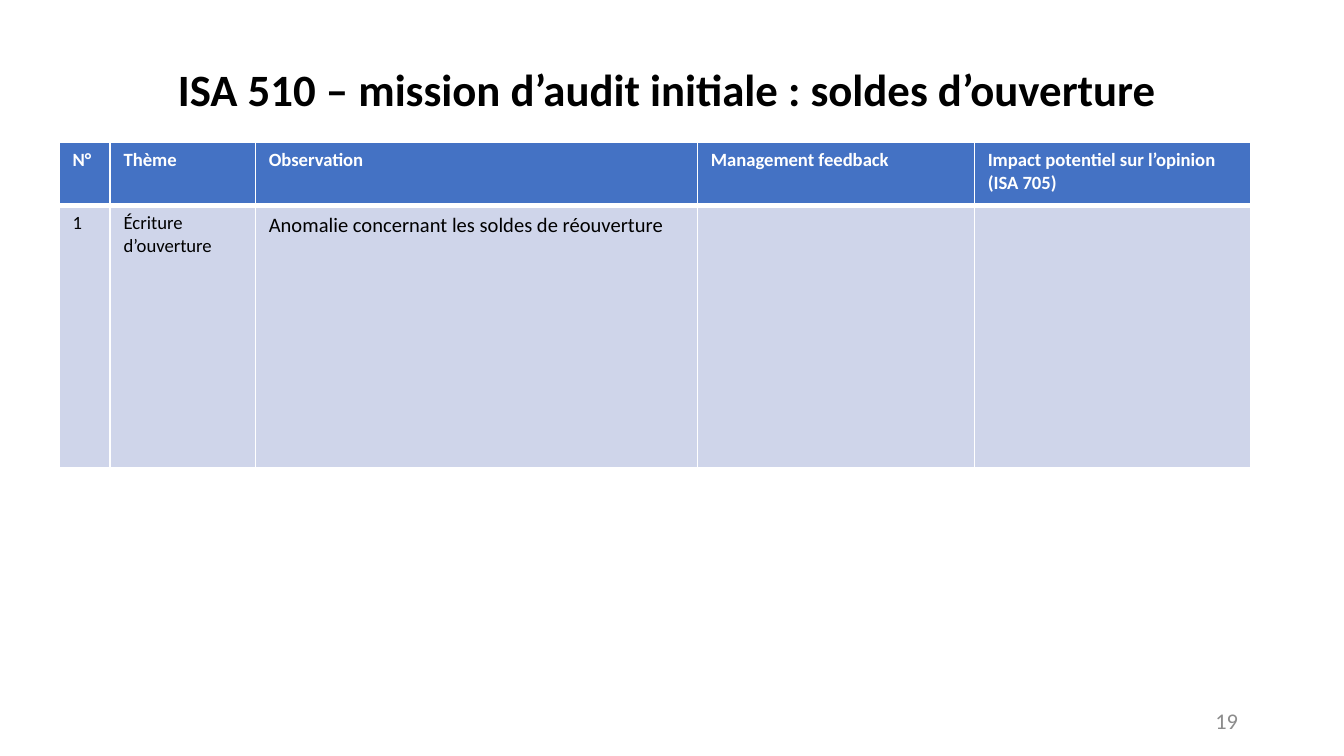
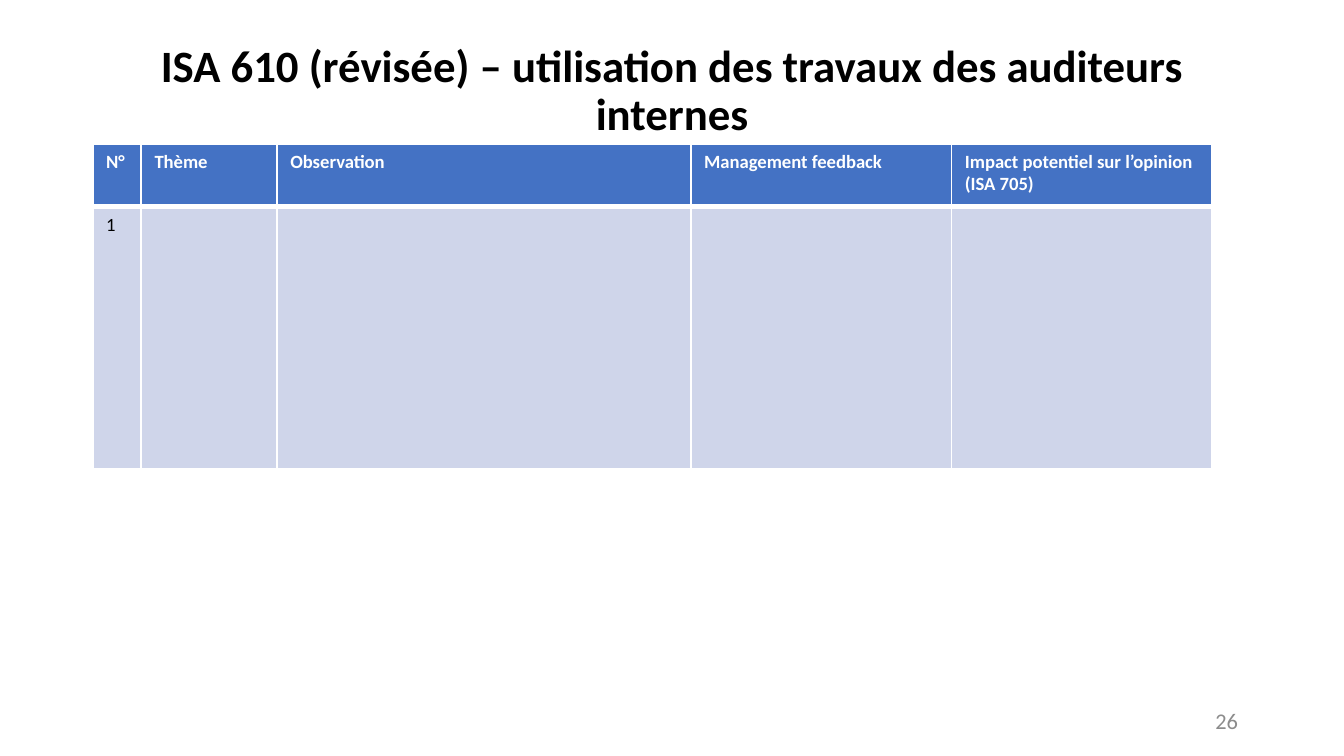
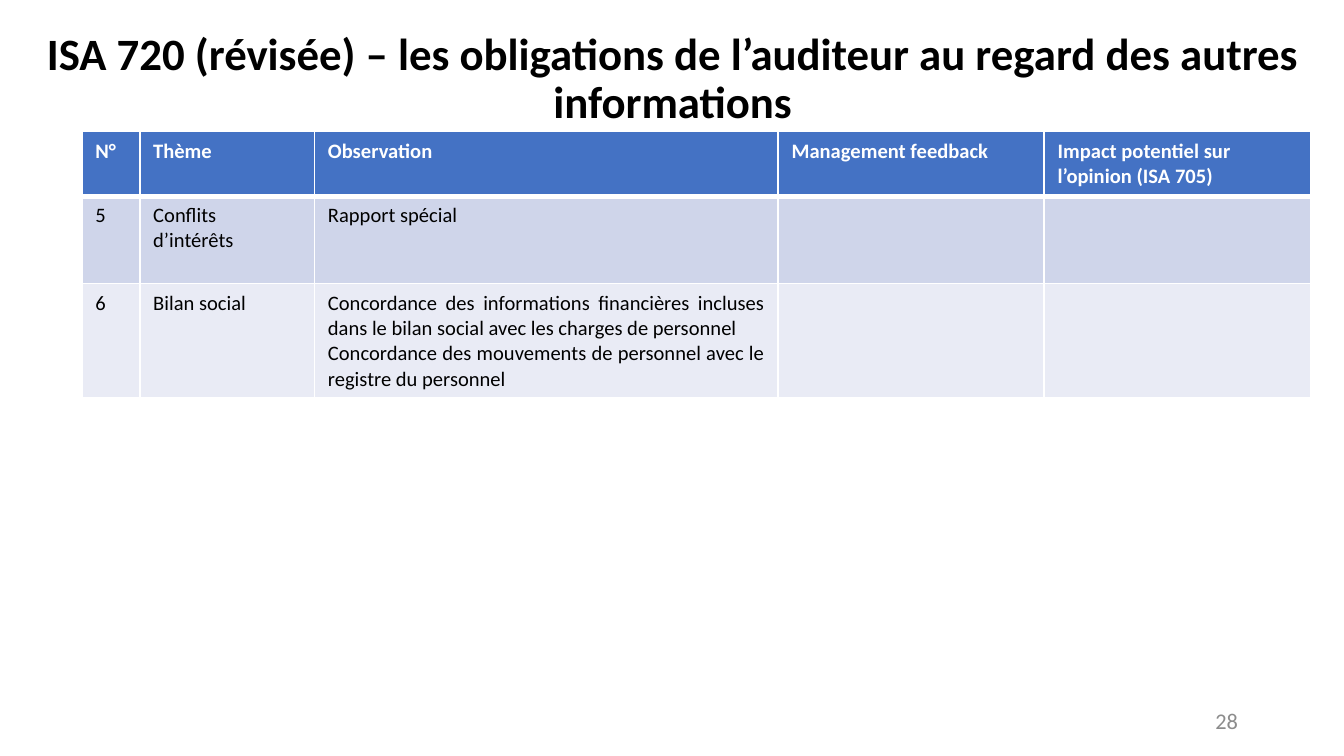
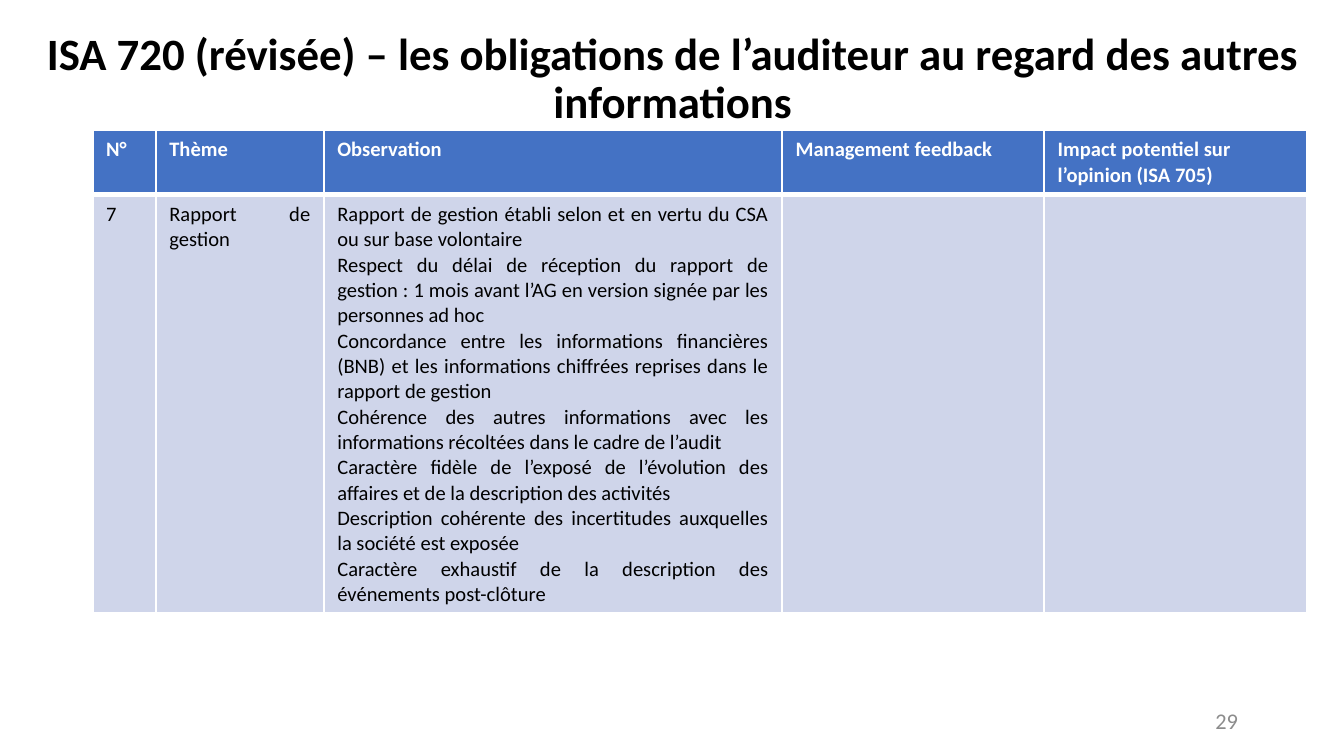
"""Build four audit slides, each with a title, a findings table and a page number."""
from lxml.etree import SubElement as Sub
from pptx import Presentation
from pptx.dml.color import RGBColor
from pptx.enum.text import MSO_ANCHOR as Anchor, PP_ALIGN as Align
from pptx.oxml.ns import qn
from pptx.util import Inches, Pt

FONT = "Calibri"
BLACK, WHITE, GREY = "000000", "FFFFFF", "8C8C8C"
HEAD, BANDS = "4472C4", ["CFD5EA", "E9EBF5"]
HEADS = ["N°", "Thème", "Observation", "Management feedback",
         "Impact potentiel sur l’opinion (ISA 705)"]
ISA720 = "ISA 720 (révisée) – les obligations de l’auditeur au regard des autres informations"
LOW, HIGH = (0.69, 0.14, 8.62, 1.09), (0.18, 0.05, 9.65, 1.09)
LEFT, JUST = Align.LEFT, Align.JUSTIFY

REPORT = """Rapport de gestion établi selon et en vertu du CSA ou sur base volontaire 
Respect du délai de réception du rapport de gestion : 1 mois avant l’AG en version signée par les personnes ad hoc
Concordance entre les informations financières (BNB) et les informations chiffrées reprises dans le rapport de gestion
Cohérence des autres informations avec les informations récoltées dans le cadre de l’audit
Caractère fidèle de l’exposé de l’évolution des affaires et de la description des activités
Description cohérente des incertitudes auxquelles la société est exposée
Caractère exhaustif de la description des événements post-clôture"""
SOCIAL = """Concordance des informations financières incluses dans le bilan social avec les charges de personnel
Concordance des mouvements de personnel avec le registre du personnel"""

PAGES = [
    dict(num="19", title="ISA 510 – mission d’audit initiale : soldes d’ouverture ", box=LOW,
         pos=(0.44, 1.06), cols=[0.38, 1.08, 3.29, 2.06, 2.06], highs=[0.47, 1.95],
         sizes=[10, 10, 11], align=LEFT,
         rows=[["1", "Écriture d’ouverture", "Anomalie concernant les soldes de réouverture "]]),
    dict(num="26", title="ISA 610 (révisée) – utilisation des travaux des auditeurs internes", box=LOW,
         pos=(0.69, 1.07), cols=[0.36, 1.01, 3.08, 1.94, 1.94], highs=[0.47, 1.95],
         sizes=[10, 10, 10], align=LEFT, rows=[["1"]]),
    dict(num="28", title=ISA720, box=HIGH,
         pos=(0.61, 0.98), cols=[0.43, 1.3, 3.45, 1.98, 1.98], highs=[0.48, 0.65, 0.85],
         sizes=[11, 11, 11], align=JUST,
         rows=[["5", "Conflits d’intérêts", "Rapport spécial "], ["6", "Bilan social", SOCIAL]]),
    dict(num="29", title=ISA720, box=HIGH,
         pos=(0.69, 0.97), cols=[0.47, 1.25, 3.41, 1.95, 1.95], highs=[0.48, 3.11],
         sizes=[11, 11, 11], align=JUST, rows=[["7", "Rapport de gestion", REPORT]]),
]


def write(frame, text, size, color, bold=False, align=LEFT):
    """Fill a text frame with evenly styled paragraphs."""
    frame.text = text
    for para in frame.paragraphs:
        para.alignment = align
        font = para.font
        font.name, font.size, font.bold = FONT, Pt(size), bold
        font.color.rgb = RGBColor.from_string(color)


def paint(cell, fill, top, base):
    """Give a cell white borders and a solid fill."""
    props = cell._tc.get_or_add_tcPr()
    for side, width in zip("LRTB", (1, 1, top, base)):
        line = Sub(props, qn("a:ln" + side), w=str(Pt(width)))
        Sub(Sub(line, qn("a:solidFill")), qn("a:srgbClr"), val=WHITE)
    cell.fill.solid()
    cell.fill.fore_color.rgb = RGBColor.from_string(fill)


deck = Presentation()
deck.slide_width = Inches(10)
deck.slide_height = deck.slide_width * 9 // 16

for page in PAGES:
    slide = deck.slides.add_slide(deck.slide_layouts[5])

    title = slide.shapes.title
    title.left, title.top, title.width, title.height = map(Inches, page["box"])
    frame = title.text_frame
    frame.vertical_anchor = Anchor.MIDDLE
    write(frame, page["title"], 24, BLACK, True, Align.CENTER)
    frame.paragraphs[0].line_spacing = 0.9

    note = slide.shapes.add_textbox(Inches(7.06), Inches(5.21), Inches(2.25), Inches(0.3))
    note.text_frame.word_wrap = True
    note.text_frame.vertical_anchor = Anchor.MIDDLE
    write(note.text_frame, page["num"], 12, GREY, align=Align.RIGHT)

    cols, highs = page["cols"], page["highs"]
    left, top = page["pos"]
    table = slide.shapes.add_table(len(highs), len(cols), Inches(left), Inches(top),
                                   Inches(sum(cols)), Inches(sum(highs))).table
    for col, width in zip(table.columns, cols):
        col.width = Inches(width)
    for row, high in zip(table.rows, highs):
        row.height = Inches(high)

    for c, text in enumerate(HEADS):
        cell = table.cell(0, c)
        paint(cell, HEAD, 1, 3)
        write(cell.text_frame, text, page["sizes"][0], WHITE, True)
    for r, texts in enumerate(page["rows"], 1):
        for c in range(len(cols)):
            paint(table.cell(r, c), BANDS[(r - 1) % 2], 3 if r == 1 else 1, 1)
        for c, text in enumerate(texts):
            write(table.cell(r, c).text_frame, text, page["sizes"][c], BLACK,
                  align=page["align"] if c else LEFT)

deck.save("out.pptx")
